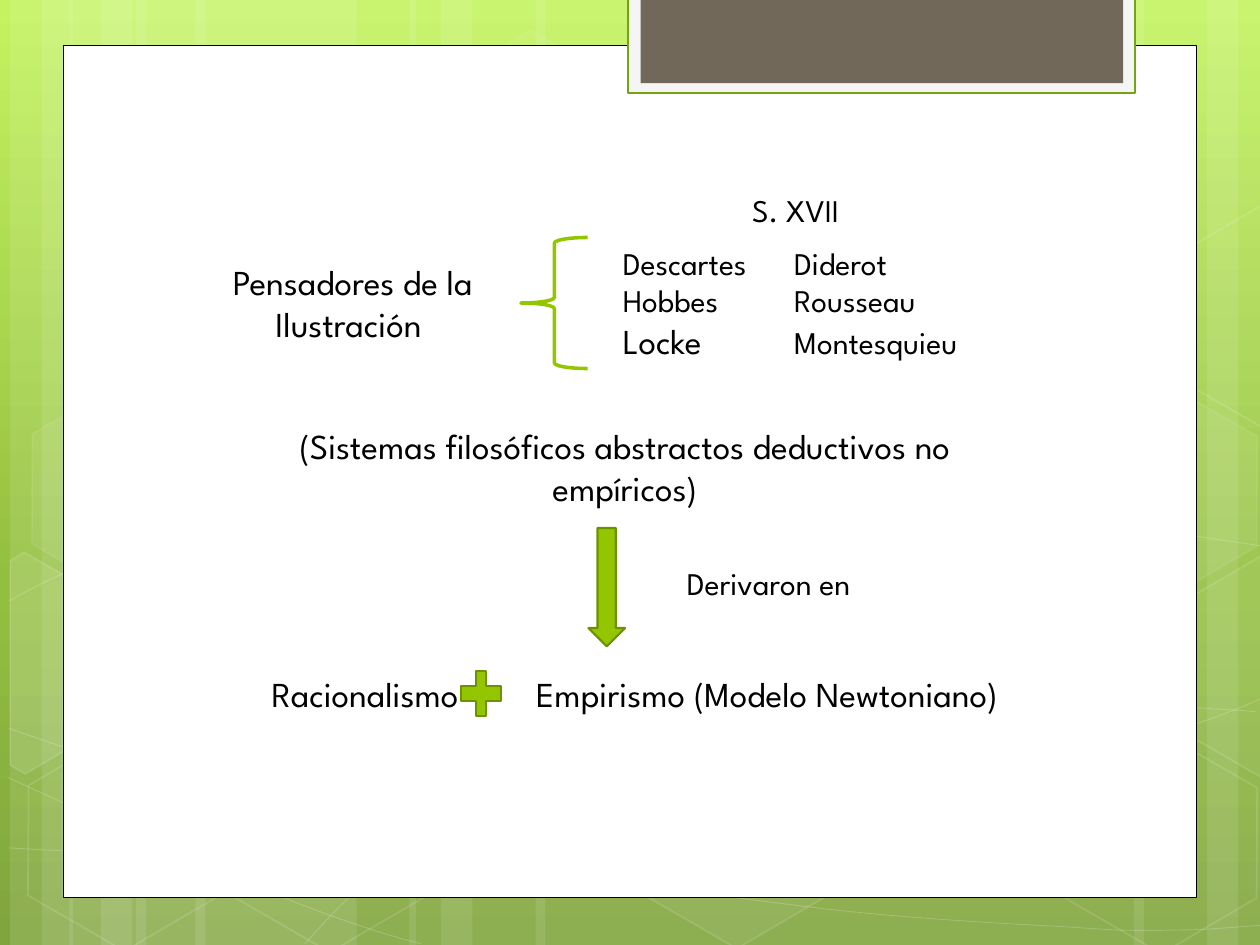
from math import cos, radians, sin

from lxml import etree
from pptx import Presentation
from pptx.dml.color import RGBColor
from pptx.enum.shapes import MSO_SHAPE
from pptx.enum.text import PP_ALIGN
from pptx.oxml.ns import qn
from pptx.util import Inches, Pt

RECT, HEXAGON = MSO_SHAPE.RECTANGLE, MSO_SHAPE.HEXAGON
BRACE, PLUS, ARROW = MSO_SHAPE.LEFT_BRACE, MSO_SHAPE.CROSS, MSO_SHAPE.DOWN_ARROW
LEFT, CENTER = PP_ALIGN.LEFT, PP_ALIGN.CENTER

COLORS = {
    "white": "FFFFFF", "black": "000000", "sky": "C3F35F", "leaf": "93BF3F",
    "moss": "81A53E", "tab_edge": "F5F5F5", "tab_line": "74A510",
    "tab": "71685A", "accent": "94C600", "accent_line": "6D9200",
}
COLUMNS = 100  # square grid cells across the slide
TILT = 30  # degrees, shared by all hexagons


def turn_back(point, center, degrees):
    """Place of a point before its shape is rotated about the center."""
    angle = radians(degrees)
    x, y = point[0] - center[0], point[1] - center[1]
    return (center[0] + x * cos(angle) + y * sin(angle),
            center[1] - x * sin(angle) + y * cos(angle))


class SlideBuilder:
    font = "League Spartan"

    def __init__(self, deck):
        self.page = deck.slides.add_slide(deck.slide_layouts[6])
        self.cell = deck.slide_width / COLUMNS

    def grid(self, *cells):
        return [round(value * self.cell) for value in cells]

    def paint(self, fill, color, alpha):
        fill.solid()
        fill.fore_color.rgb = RGBColor.from_string(COLORS[color])
        if alpha < 100:
            for node in fill._xPr.iter(qn("a:srgbClr")):
                etree.SubElement(node, qn("a:alpha"), val=str(alpha * 1000))

    def style(self, shape, fill=None, alpha=100, line=None, weight=1, line_alpha=100):
        shape.shadow.inherit = False
        # The line is cleared first so that each alpha lands on its own colour
        shape.line.fill.background()
        if fill:
            self.paint(shape.fill, fill, alpha)
        else:
            shape.fill.background()
        if line:
            shape.line.width = Pt(weight)
            self.paint(shape.line.fill, line, line_alpha)

    def background(self, stops):
        fill = self.page.background.fill
        fill.gradient()
        fill.gradient_angle = 270
        stop_list = next(fill._xPr.iter(qn("a:gsLst")))
        for old in list(stop_list):
            stop_list.remove(old)
        for place, color in stops:
            stop = etree.SubElement(stop_list, qn("a:gs"), pos=str(place * 1000))
            etree.SubElement(stop, qn("a:srgbClr"), val=COLORS[color])

    def shape(self, kind, place, adjust=(), rotation=0, **look):
        shape = self.page.shapes.add_shape(kind, *self.grid(*place))
        for index, value in enumerate(adjust):
            shape.adjustments[index] = value
        shape.rotation = rotation
        self.style(shape, **look)

    def outline(self, points, close=False, **look):
        start, *rest = [self.grid(*point) for point in points]
        builder = self.page.shapes.build_freeform(*start)
        builder.add_line_segments(rest, close=close)
        shape = builder.convert_to_shape()
        self.style(shape, **look)
        return shape

    def cut_hexagon(self, points, center, **look):
        flat = [turn_back(point, center, TILT) for point in points]
        self.outline(flat, close=True, **look).rotation = TILT

    def curve(self, points, **look):
        """Smooth line through a start and groups of three control points."""
        shape = self.outline(points, **look)
        segments = list(shape._element.iter(qn("a:lnTo")))
        track = segments[0].getparent()
        for index in range(0, len(segments), 3):
            bend = etree.SubElement(track, qn("a:cubicBezTo"))
            for segment in segments[index:index + 3]:
                bend.append(segment[0])
                track.remove(segment)

    def text(self, place, lines, align=CENTER, inset=1, tab=None):
        """Each line is a list of (words, size) spans."""
        box = self.page.shapes.add_textbox(*self.grid(*place))
        frame = box.text_frame
        frame.word_wrap = True
        frame.margin_left = self.grid(inset)[0]
        for index, spans in enumerate(lines):
            para = frame.paragraphs[0] if index == 0 else frame.add_paragraph()
            para.alignment = align
            if tab:
                tabs = etree.SubElement(para._p.get_or_add_pPr(), qn("a:tabLst"))
                etree.SubElement(tabs, qn("a:tab"), pos=str(self.grid(tab)[0]), algn="l")
            for words, size in spans:
                span = para.add_run()
                span.text = words
                for name, value in {"name": self.font, "size": Pt(size)}.items():
                    setattr(span.font, name, value)
                span.font.color.rgb = RGBColor.from_string(COLORS["black"])


STRIPES = [  # left, width
    (10.8, 17.5), (0.8, 5), (3.3, 8.3), (15.5, 17.5), (5.5, 5), (8, 8.3),
    (73.3, 17.5), (95.8, 5), (90, 8.3), (42.5, 30.8), (32.5, 5), (35, 8.3),
]
CURVES = [
    [(0.7, 67.3), (6.1, 67.6), (11.5, 67.9), (19, 67.8), (26.5, 67.7), (35.8, 67.5),
     (45.8, 66.5), (55.8, 65.5), (70, 63.6), (79.2, 61.7), (88.3, 59.8), (97.7, 56.8),
     (100.7, 55.1)],
    [(0.7, 47.7), (3.6, 46.1), (6.5, 44.6), (12.1, 43.1), (17.8, 41.6), (25.9, 39.4),
     (34.7, 38.7), (43.6, 38), (54.4, 37.9), (65.4, 38.7), (76.4, 39.5), (94.7, 42.6),
     (100.7, 43.4)],
    [(0.6, 61.7), (12.7, 67.2), (24.7, 72.7), (33.4, 74.9)],
    [(0.7, 57.8), (3.8, 58.9), (7, 60), (12.8, 61.6), (18.6, 63.1), (27.3, 65.6),
     (35.7, 67.3), (44, 69), (54.5, 70.8), (62.8, 71.8), (71.1, 72.9), (80, 73.3),
     (85.3, 73.6), (90.5, 74), (91.9, 73.8), (94.5, 73.8), (97.1, 73.7), (98.9, 73.5),
     (100.7, 73.4)],
    [(24.2, 74.9), (26, 72.9), (27.8, 70.9), (30.2, 69.1), (32.6, 67.3), (36, 65.3),
     (38.8, 63.9), (41.6, 62.5), (43.3, 61.9), (47, 60.9), (50.6, 59.9), (57.3, 58.5),
     (60.8, 57.8), (64.4, 57.1), (64.9, 57.1), (68, 56.9), (71.1, 56.6), (76, 56.3),
     (79.4, 56.2), (82.9, 56.1), (88.6, 56.2), (88.6, 56.2), (90.8, 56.2), (93.1, 56.2),
     (95.3, 56.2), (97.1, 56.3), (98.8, 56.4), (99.7, 56.5)],
]
HEXAGONS = [  # left, top, fill opacity, line opacity
    (33.4, 3.6, 4, 8), (49.7, 58.9, 6, 12), (1.1, 59.1, 0, 12), (1.4, 31.2, 7, 8),
    (17.4, 59.2, 0, 12), (75.3, 45.3, 10, 12), (83.4, 59.3, 0, 12), (83.4, 31.4, 7, 8),
]
LEFT_CUT = [(0.8, 44.5), (1.9, 43.8), (9.6, 48.2), (9.5, 57), (2, 61.4), (0.8, 60.7)]
RIGHT_CUT = [(92.6, 48.5), (100.1, 44.1), (100.9, 44.6), (100.9, 61.3), (100.2, 61.7),
             (92.6, 57.3)]
UPPER_CUT = [(x, y - 27.8) for x, y in RIGHT_CUT]
CUT_HEXAGONS = [  # points, center, fill opacity
    (LEFT_CUT, (3.6, 53.5), 10), (RIGHT_CUT, (98.5, 52), 4), (UPPER_CUT, (98.5, 24.2), 0),
]


def main():
    deck = Presentation()
    deck.slide_width, deck.slide_height = Inches(10), Inches(7.5)
    slide = SlideBuilder(deck)

    # Green backdrop with stripes, curves and hexagons
    slide.background([(0, "sky"), (62, "leaf"), (100, "moss")])
    for left, width in STRIPES:
        slide.shape(RECT, (left, 0, width, 75), fill="white", alpha=10)
    for points in CURVES:
        slide.curve(points, line="white", weight=0.5, line_alpha=20)
    for left, top, alpha, line_alpha in HEXAGONS:
        slide.shape(HEXAGON, (left, top, 17.5, 15.2), adjust=(0.285,), rotation=TILT,
                    fill="white" if alpha else None, alpha=alpha,
                    line="white", line_alpha=line_alpha)
    for points, center, alpha in CUT_HEXAGONS:
        slide.cut_hexagon(points, center, fill="white" if alpha else None, alpha=alpha,
                          line="white", line_alpha=12)

    # White sheet and its top tab
    slide.shape(RECT, (5, 3.6, 90, 67.65), fill="white", line="black", weight=0.5)
    slide.shape(RECT, (49.85, -0.2, 40.2, 7.6), fill="tab_edge", line="tab_line", weight=1.25)
    slide.shape(RECT, (50.85, -0.2, 38.3, 6.8), fill="tab")

    # Thinkers of the century
    slide.text((15.4, 20.2, 25.2, 7.7), [[("Pensadores de la Ilustración ", 20)]])
    slide.text((48.45, 18.85, 37, 10.4),
               [[("Descartes\tDiderot", 18)], [("Hobbes\tRousseau", 18)],
                [("Locke", 20), ("\tMontesquieu", 18)]], align=LEFT, tab=13.6)
    slide.text((57.85, 14.7, 10.6, 4), [[("S. XVII", 18)]])
    slide.shape(BRACE, (41.35, 18.85, 5.3, 10.4), line="accent", weight=2)

    # What their systems led to
    slide.text((19.3, 33.2, 60.6, 7.7),
               [[("(Sistemas filosóficos abstractos deductivos no empíricos)", 20)]])
    slide.text((48.4, 44.25, 25.2, 4), [[("Derivaron en", 18)]])
    slide.text((15.4, 52.9, 70.1, 7.7), [[("Racionalismo\tEmpirismo (Modelo Newtoniano)", 20)]],
               align=LEFT, inset=6.15, tab=21)
    solid = {"fill": "accent", "line": "accent_line", "weight": 1.25}
    slide.shape(PLUS, (36.6, 53.25, 3.15, 3.6), adjust=(0.375,), **solid)
    slide.shape(ARROW, (46.7, 41.9, 2.9, 9.4), **solid)

    deck.save("out.pptx")


if __name__ == "__main__":
    main()
